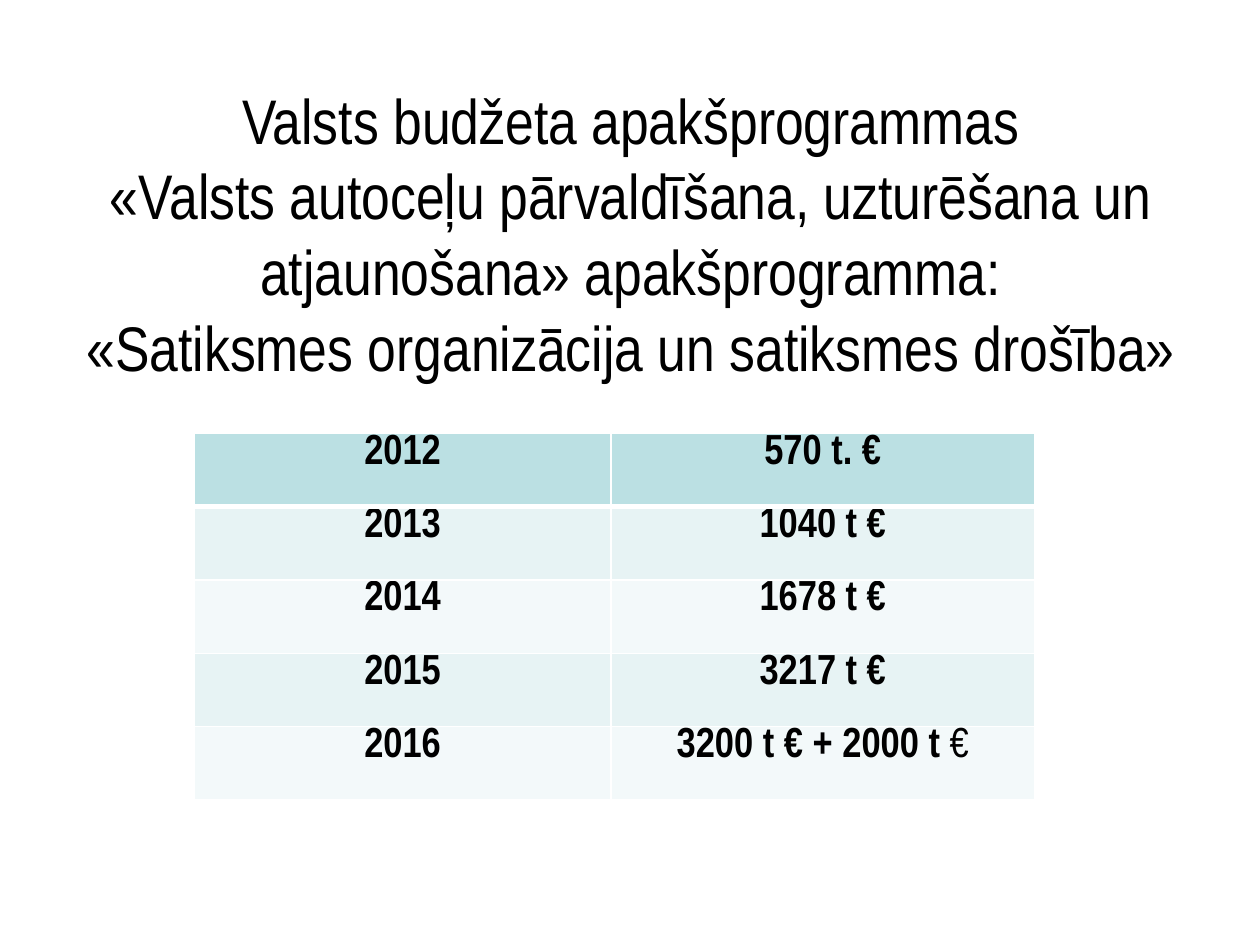
from dataclasses import dataclass

from lxml import etree
from pptx import Presentation
from pptx.dml.color import RGBColor
from pptx.enum.text import MSO_ANCHOR, PP_ALIGN
from pptx.oxml.ns import qn
from pptx.slide import Slide
from pptx.table import _Cell
from pptx.util import Pt

CENTER = PP_ALIGN.CENTER
TOP = MSO_ANCHOR.TOP
FONT = "Arial Narrow"
COLORS = {
    "text": "000000",
    "border": "FFFFFF",
    "header": "BBE0E3",
    "odd": "E7F3F4",
    "even": "F3F9FA",
}
TITLE_LINES = [
    "Valsts budžeta apakšprogrammas",
    "«Valsts autoceļu pārvaldīšana, uzturēšana un atjaunošana» apakšprogramma:",
    "«Satiksmes organizācija un satiksmes drošība»",
]
COLUMN_WIDTHS = [238.3, 241.9]
ROW_HEIGHT = 41.9


@dataclass
class BudgetYear:
    year: str
    amount: str
    plain_suffix: str = ""


BUDGET = [
    BudgetYear("2012", "570 t. €"),
    BudgetYear("2013", "1040 t €"),
    BudgetYear("2014", "1678 t €"),
    BudgetYear("2015", "3217 t €"),
    BudgetYear("2016", "3200 t € + 2000 t ", "€"),
]


def add_span(para, text: str, size: float, bold: bool = False) -> None:
    span = para.add_run()
    span.text = text
    span.font.name = FONT
    span.font.size = Pt(size)
    span.font.bold = bold
    span.font.color.rgb = RGBColor.from_string(COLORS["text"])


def add_title(page: Slide) -> None:
    box = page.shapes.add_textbox(Pt(20.2), Pt(20.9), Pt(680.4), Pt(306))
    frame = box.text_frame
    frame.word_wrap = True
    frame.vertical_anchor = TOP
    frame.margin_top = Pt(25.6)
    para = frame.paragraphs[0]
    para.alignment = CENTER
    for index, line in enumerate(TITLE_LINES):
        if index:
            para.add_line_break()
        add_span(para, line, 36)


def set_borders(cell: _Cell, top: float, bottom: float) -> None:
    properties = cell._tc.get_or_add_tcPr()
    for side, width in (("L", 1), ("R", 1), ("T", top), ("B", bottom)):
        line = etree.SubElement(properties, qn(f"a:ln{side}"), w=str(Pt(width)))
        fill = etree.SubElement(line, qn("a:solidFill"))
        etree.SubElement(fill, qn("a:srgbClr"), val=COLORS["border"])


def fill_cell(cell: _Cell, row: int, text: str, plain_suffix: str = "") -> None:
    """Style one cell by its row and write bold text with an optional plain ending."""
    set_borders(cell, top=3 if row == 1 else 1, bottom=3 if row == 0 else 1)
    shade = "header" if row == 0 else "odd" if row % 2 else "even"
    cell.fill.solid()
    cell.fill.fore_color.rgb = RGBColor.from_string(COLORS[shade])
    cell.vertical_anchor = TOP
    cell.margin_top = cell.margin_bottom = Pt(0)
    para = cell.text_frame.paragraphs[0]
    para.alignment = CENTER
    add_span(para, text, 24, bold=True)
    if plain_suffix:
        add_span(para, plain_suffix, 24)


def add_budget_table(page: Slide) -> None:
    table = page.shapes.add_table(
        len(BUDGET), len(COLUMN_WIDTHS), Pt(110.9), Pt(247.7),
        Pt(sum(COLUMN_WIDTHS)), Pt(ROW_HEIGHT * len(BUDGET)),
    ).table
    for column, width in zip(table.columns, COLUMN_WIDTHS):
        column.width = Pt(width)
    for row, entry in enumerate(BUDGET):
        table.rows[row].height = Pt(ROW_HEIGHT)
        fill_cell(table.cell(row, 0), row, entry.year)
        fill_cell(table.cell(row, 1), row, entry.amount, entry.plain_suffix)


def main() -> None:
    deck = Presentation()
    deck.slide_width, deck.slide_height = Pt(720), Pt(540)
    page = deck.slides.add_slide(deck.slide_layouts[6])
    add_title(page)
    add_budget_table(page)
    deck.save("out.pptx")


if __name__ == "__main__":
    main()
